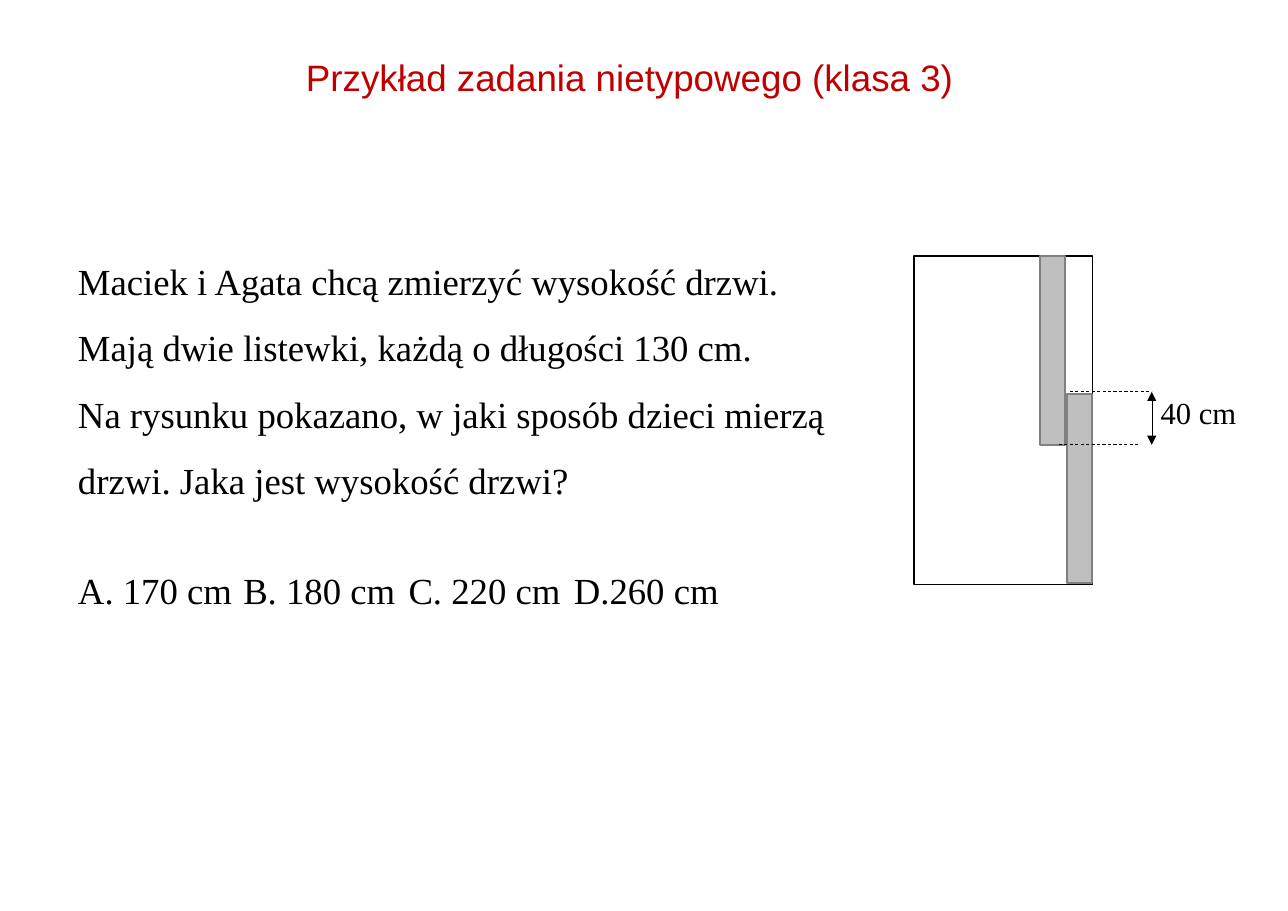
import pptx
import pptx.dml.color
import pptx.enum.dml
import pptx.enum.shapes
import pptx.enum.text
import pptx.oxml
import pptx.util
from pptx.oxml import ns

PX = 914400 / 110.2
SERIF = "Times New Roman"
ALIGN = pptx.enum.text.PP_ALIGN
ANCHOR = pptx.enum.text.MSO_ANCHOR


def px(*nums):
    return [pptx.util.Emu(round(n * PX)) for n in nums]


def color(code):
    return pptx.dml.color.RGBColor.from_string(code)


def node(parent, tag, **attrs):
    item = pptx.oxml.parse_xml(f"<{tag} {ns.nsdecls('a')}/>")
    for key, value in attrs.items():
        item.set(key, str(value))
    parent.append(item)
    return item


def add_run(para, text, size=24, face=SERIF, ink="000000"):
    run = para.add_run()
    run.text = text
    run.font.size = pptx.util.Pt(size)
    run.font.name = face
    run.font.color.rgb = color(ink)


def place(shape, left, top, width, height):
    shape.left, shape.top, shape.width, shape.height = px(left, top, width, height)
    frame = shape.text_frame
    frame.word_wrap = True
    frame.auto_size = pptx.enum.text.MSO_AUTO_SIZE.NONE
    return frame


def style(para, before=0, stops=()):
    para.alignment = ALIGN.LEFT
    para.line_spacing = 1.5
    para.space_before = pptx.util.Pt(before)
    props = para._p.get_or_add_pPr()
    props.set("marL", "0")
    props.set("indent", "0")
    node(props, "a:buNone")
    if stops:
        tabs = node(props, "a:tabLst")
        for stop in px(*stops):
            node(tabs, "a:tab", pos=int(stop), algn="l")


def add_box(group, area, fill, edge=None, weight=1):
    box = group.shapes.add_shape(pptx.enum.shapes.MSO_SHAPE.RECTANGLE, *px(*area))
    box.shadow.inherit = False
    box.fill.solid()
    box.fill.fore_color.rgb = color(fill)
    if edge:
        box.line.color.rgb = color(edge)
        box.line.width = pptx.util.Pt(weight)
    else:
        box.line.fill.background()
    return box


def add_line(group, ends, weight, dash=False, arrows=False):
    kind = pptx.enum.shapes.MSO_CONNECTOR.STRAIGHT
    line = group.shapes.add_connector(kind, *px(*ends))
    line.line.color.rgb = color("000000")
    line.line.width = pptx.util.Pt(weight)
    if dash:
        line.line.dash_style = pptx.enum.dml.MSO_LINE.DASH
    if arrows:
        for tag in ("a:headEnd", "a:tailEnd"):
            node(line.line._get_or_add_ln(), tag, type="triangle")
    node(line._element.spPr, "a:effectLst")


def add_title(slide):
    frame = place(slide.shapes.title, 306, 55, 703, 54)
    frame.margin_left = frame.margin_right = 0
    frame.margin_top = frame.margin_bottom = 0
    frame.vertical_anchor = ANCHOR.TOP
    para = frame.paragraphs[0]
    para.alignment = ALIGN.LEFT
    add_run(para, "Przykład zadania nietypowego (klasa 3)", face="Arial", ink="C00000")


def add_task(slide):
    frame = place(slide.placeholders[1], 67, 230, 819, 389)
    frame.vertical_anchor = ANCHOR.MIDDLE
    task = frame.paragraphs[0]
    style(task)
    lines = (
        "Maciek i Agata chcą zmierzyć wysokość drzwi.",
        "Mają dwie listewki, każdą o długości 130 cm.",
        "Na rysunku pokazano, w jaki sposób dzieci mierzą drzwi. "
        "Jaka jest wysokość drzwi?",
    )
    for index, text in enumerate(lines):
        if index:
            task.add_line_break()
        add_run(task, text)

    # Answers on tab stops
    answers = frame.add_paragraph()
    style(answers, before=28.8, stops=(220, 409, 634))
    add_run(answers, "A. 170 cm\tB. 180 cm\tC. 220 cm\tD.260 cm")


def add_door(slide):
    group = slide.shapes.add_group_shape()

    # Overlap label
    label = add_box(group, (1150, 404, 119, 63), "FFFFFF")
    label.text_frame.vertical_anchor = ANCHOR.TOP
    para = label.text_frame.paragraphs[0]
    para.alignment = ALIGN.JUSTIFY
    para.line_spacing = pptx.util.Pt(14)
    add_run(para, "40 cm", size=20)

    # Door and the two slats
    add_box(group, (914, 256, 179, 329), "FFFFFF", "000000")
    for left, top in ((1040, 256), (1067, 394)):
        add_box(group, (left, top, 25, 189), "BFBFBF", "808080", 1.5)

    # Overlap marks
    high, low = 392, 445
    for left, top in ((1070, high), (1059, low)):
        add_line(group, (left, top, left + 82, top), 0.5, dash=True)
    add_line(group, (1152, low, 1152, high), 0.25, arrows=True)


def main():
    deck = pptx.Presentation()
    deck.slide_width = pptx.util.Inches(11.69)
    deck.slide_height = pptx.util.Inches(8.27)
    slide = deck.slides.add_slide(deck.slide_layouts[1])
    add_title(slide)
    add_door(slide)
    add_task(slide)
    deck.save("out.pptx")


if __name__ == "__main__":
    main()
